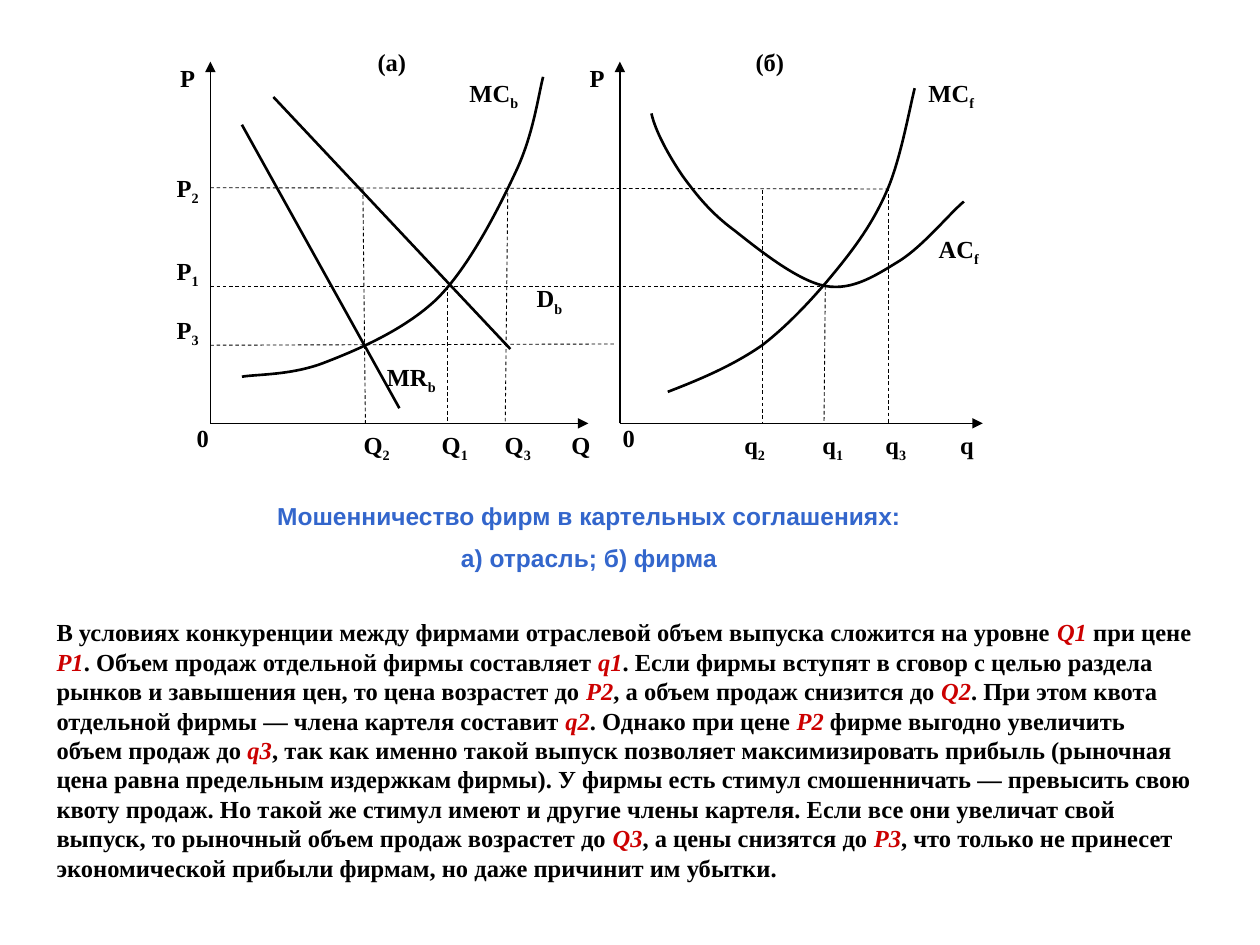
from pptx import Presentation
from pptx.dml.color import RGBColor
from pptx.enum.dml import MSO_LINE
from pptx.enum.shapes import MSO_CONNECTOR
from pptx.enum.text import MSO_ANCHOR, MSO_AUTO_SIZE, PP_ALIGN
from pptx.oxml.ns import qn
from pptx.util import Emu, Pt
from lxml.etree import SubElement

PX = 9144  # 100 px to the inch
BLACK = RGBColor(0x00, 0x00, 0x00)
RED = RGBColor(0xCC, 0x00, 0x00)
BLUE = RGBColor(0x33, 0x66, 0xCC)
SERIF, SANS = "Times New Roman", "Arial"


def px(*lengths):
    return [Emu(length * PX) for length in lengths]


class CartelSlide:
    text_size = Pt(14)

    def __init__(self, presentation):
        self.slide = presentation.slides.add_slide(presentation.slide_layouts[5])
        self.shapes = self.slide.shapes

    def format_frame(self, frame, inset_x=2, inset_y=1):
        frame.word_wrap = True
        frame.auto_size = MSO_AUTO_SIZE.NONE
        frame.vertical_anchor = MSO_ANCHOR.TOP
        frame.margin_left, frame.margin_right = px(inset_x, inset_x)
        frame.margin_top, frame.margin_bottom = px(inset_y, inset_y)

    def format_paragraph(self, paragraph, font_name, color, align):
        paragraph.alignment = align
        font = paragraph.font
        font.name, font.size, font.bold = font_name, self.text_size, True
        font.color.rgb = color

    def caption(self, lines, left, top, width, height):
        title = self.shapes.title
        title.left, title.top, title.width, title.height = px(left, top, width, height)
        frame = title.text_frame
        frame.text = "\n".join(lines)
        self.format_frame(frame)
        for paragraph in frame.paragraphs:
            self.format_paragraph(paragraph, SANS, BLUE, PP_ALIGN.CENTER)
        for paragraph in frame.paragraphs[1:]:
            paragraph.space_before = Pt(7)

    def label(self, text, left, top, width=38, height=37, align=PP_ALIGN.CENTER):
        """Write a label; what follows an underscore is a subscript."""
        frame = self.shapes.add_textbox(*px(left, top, width, height)).text_frame
        self.format_frame(frame)
        paragraph = frame.paragraphs[0]
        self.format_paragraph(paragraph, SERIF, BLACK, align)
        base, _, subscript = text.partition("_")
        paragraph.add_run().text = base
        if subscript:
            run = paragraph.add_run()
            run.text = subscript
            run.font._element.set("baseline", "-25000")

    def explanation(self, sentences, left, top, width, height):
        """Write a paragraph; symbols between asterisks are red italics."""
        frame = self.shapes.add_textbox(*px(left, top, width, height)).text_frame
        self.format_frame(frame, 10, 5)
        paragraph = frame.paragraphs[0]
        self.format_paragraph(paragraph, SERIF, BLACK, PP_ALIGN.LEFT)
        for index, part in enumerate(" ".join(sentences).split("*")):
            run = paragraph.add_run()
            run.text = part
            if index % 2:
                run.font.italic = True
                run.font.color.rgb = RED

    def line(self, x1, y1, x2, y2, weight):
        connector = self.shapes.add_connector(MSO_CONNECTOR.STRAIGHT, *px(x1, y1, x2, y2))
        connector.line.color.rgb = BLACK
        connector.line.width = Pt(weight)
        SubElement(connector._element.spPr, qn("a:effectLst"))
        return connector

    def axis(self, *ends):
        outline = self.line(*ends, 0.75)._element.spPr.find(qn("a:ln"))
        SubElement(outline, qn("a:tailEnd"), type="triangle")

    def guide(self, *ends):
        self.line(*ends, 0.5).line.dash_style = MSO_LINE.DASH

    def curve(self, start, *points):
        """Draw cubic Bezier segments, three points to each."""
        builder = self.shapes.build_freeform(*start, scale=PX)
        builder.add_line_segments(points, close=False)
        shape = builder.convert_to_shape()
        outline = shape._element.spPr.find(".//" + qn("a:path"))
        steps = outline.findall(qn("a:lnTo"))
        for first in range(0, len(steps), 3):
            bezier = SubElement(outline, qn("a:cubicBezTo"))
            for step in steps[first:first + 3]:
                bezier.append(step[0])
                outline.remove(step)
        shape.fill.background()
        shape.line.color.rgb = BLACK
        shape.line.width = Pt(1.5)
        shape.shadow.inherit = False


def main():
    presentation = Presentation()
    presentation.slide_width, presentation.slide_height = px(1000, 750)
    page = CartelSlide(presentation)

    # Axes of both graphs
    base_y = 336
    for origin_x, end_x in ((167, 467), (492, 780)):
        page.axis(origin_x, base_y, origin_x, 49)
        page.axis(origin_x, base_y, end_x, base_y)

    # Industry: marginal cost, demand, marginal revenue
    page.curve((192, 299), (203, 297), (231, 298), (257, 288),
               (283, 278), (321, 262), (347, 237),
               (372, 212), (395, 167), (409, 137),
               (423, 108), (427, 77), (431, 61))
    page.line(217, 77, 405, 277, 1.5)
    page.line(192, 99, 317, 324, 1.5)

    # Firm: average cost, marginal cost
    page.curve((517, 90), (520, 104), (531, 124), (542, 140),
               (553, 155), (564, 169), (583, 183),
               (602, 198), (633, 223), (655, 227),
               (677, 231), (696, 218), (714, 207),
               (733, 195), (754, 169), (765, 160))
    page.curve((530, 311), (556, 301), (582, 290), (605, 274),
               (627, 257), (648, 234), (665, 213),
               (682, 192), (695, 173), (705, 149),
               (715, 125), (722, 86), (726, 70))

    # Price levels, then output levels
    for end_x, start_y, end_y in ((705, 149, 150), (668, 227, 227), (489, 274, 273)):
        page.guide(167, start_y, end_x, end_y)
    for top_x, top_y, foot_x in ((288, 150, 290), (355, 227, 355), (403, 153, 401),
                                 (605, 151, 605), (655, 227, 654), (705, 149, 705)):
        page.guide(top_x, top_y, foot_x, base_y)

    # Axis labels
    for text, top in (("Р", 49), ("Р_2", 136), ("Р_1", 202), ("Р_3", 249)):
        page.label(text, 130, top)
    page.label("Р", 455, 49)
    for text, left in (("Q_2", 280), ("Q_1", 342), ("Q_3", 392), ("Q", 442),
                       ("q_2", 580), ("q_1", 642), ("q_3", 692)):
        page.label(text, left, 340)
    page.label("q", 755, 340, 25)
    for left in (142, 480):
        page.label("0", left, 335)

    # Curve labels and graph letters
    page.label("MC_b", 367, 61, 50)
    page.label("MC_f", 730, 61, 50)
    page.label("D_b", 417, 224)
    page.label("AC_f", 742, 185)
    page.label("MR_b", 305, 286, 62, align=PP_ALIGN.LEFT)
    page.label("(а)", 255, 36, 112)
    page.label("(б)", 567, 36, 88)

    # Caption and explanation
    page.caption(("Мошенничество фирм в картельных соглашениях:",
                  "а) отрасль; б) фирма"), 155, 397, 625, 63)
    page.explanation((
        "В условиях конкуренции между фирмами отраслевой объем выпуска сложится "
        "на уровне *Q1* при цене *Р1*.",
        "Объем продаж отдельной фирмы составляет *q1*.",
        "Если фирмы вступят в сговор с целью раздела рынков и завышения цен, то цена "
        "возрастет до *Р2*, а объем продаж снизится до *Q2*.",
        "При этом квота отдельной фирмы — члена картеля составит *q2*.",
        "Однако при цене *Р2* фирме выгодно увеличить объем продаж до *q3*, так как "
        "именно такой выпуск позволяет максимизировать прибыль (рыночная цена равна "
        "предельным издержкам фирмы).",
        "У фирмы есть стимул смошенничать — превысить свою квоту продаж.",
        "Но такой же стимул имеют и другие члены картеля.",
        "Если все они увеличат свой выпуск, то рыночный объем продаж возрастет до *Q3*, "
        "а цены снизятся до *Р3*, что только не принесет экономической прибыли фирмам, "
        "но даже причинит им убытки.",
    ), 35, 485, 921, 219)

    presentation.save("out.pptx")


if __name__ == "__main__":
    main()
